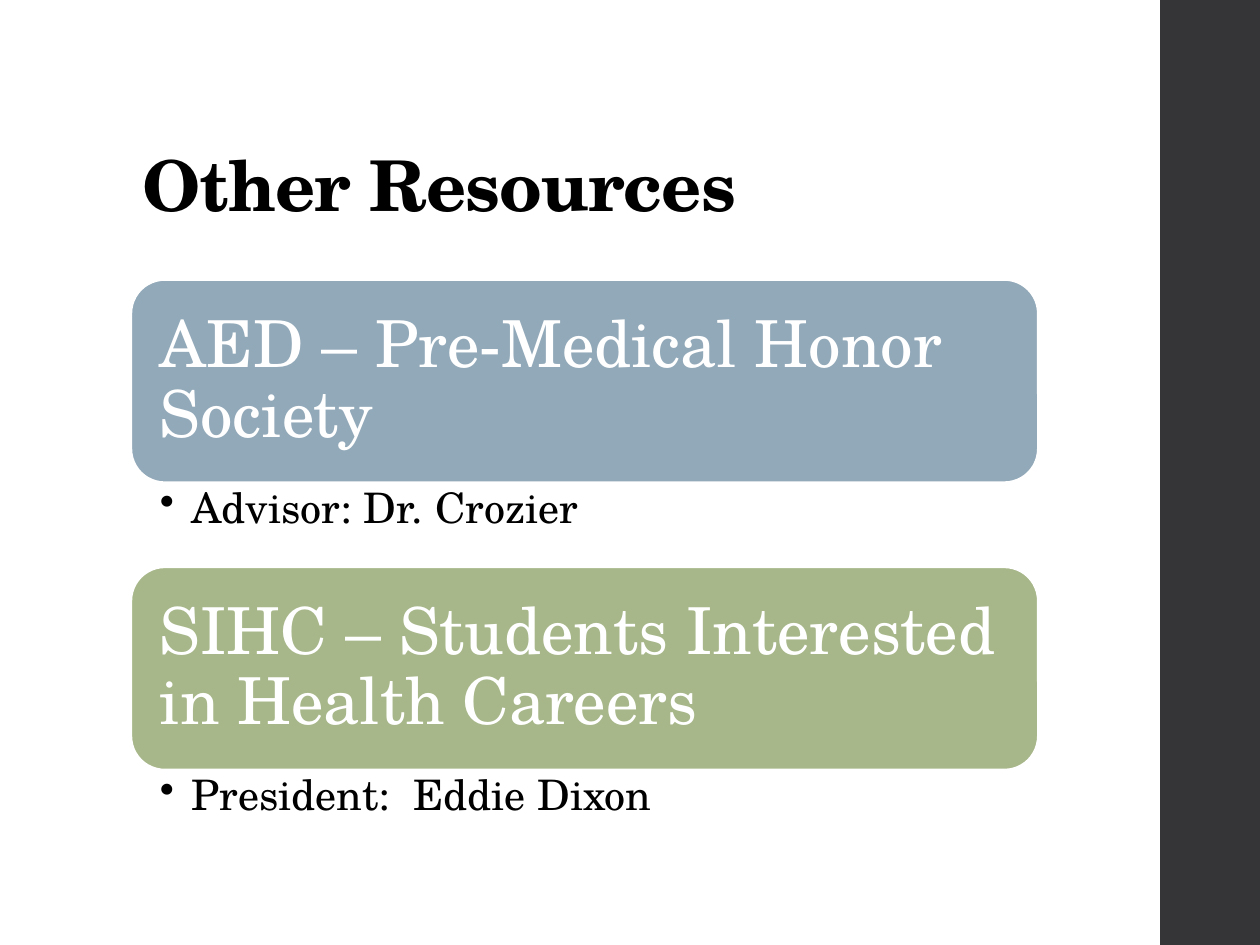
from lxml import etree
from pptx import Presentation, util as u
from pptx.dml.color import RGBColor
from pptx.enum import shapes, text
from pptx.oxml.ns import qn

Pt = u.Pt


def rgb(value):
    return RGBColor.from_string(value)


def add_text(tf, words, size, color, insets, anchor):
    tf.word_wrap = True
    tf.auto_size = text.MSO_AUTO_SIZE.NONE
    tf.vertical_anchor = anchor
    tf.margin_left, tf.margin_top, tf.margin_right, tf.margin_bottom = [Pt(i) for i in insets]
    p = tf.paragraphs[0]
    p.alignment = text.PP_ALIGN.LEFT
    p.line_spacing = 0.9
    r = p.add_run()
    r.text = words
    r.font.name = "TeX Gyre Schola"
    r.font.size = Pt(size)
    r.font.color.rgb = rgb(color)
    return p, r


prs = Presentation()
prs.slide_width, prs.slide_height = Pt(720), Pt(540)
s = prs.slides.add_slide(prs.slide_layouts[5])

sidebar = s.shapes.add_shape(shapes.MSO_SHAPE.RECTANGLE, Pt(663), 0, Pt(57.5), Pt(540))
sidebar.shadow.inherit = False
sidebar.fill.solid()
sidebar.fill.fore_color.rgb = rgb("353537")
sidebar.line.fill.background()

title = s.shapes.title
title.left, title.top, title.width, title.height = Pt(74.2), Pt(28.8), Pt(572.4), Pt(104.4)
p, r = add_text(title.text_frame, "Other Resources", 40, "000000",
                (7.2, 3.6, 7.2, 3.6), text.MSO_ANCHOR.BOTTOM)
r.font.bold = True
r._r.get_or_add_rPr().set("spc", "-50")

groups = [
    ("AED – Pre-Medical Honor Society", "Advisor: Dr. Crozier", "92A9B9"),
    ("SIHC – Students Interested in Health Careers", "President:  Eddie Dixon", "A7B789"),
]
left, top, width, card_h, detail_h = 74.9, 159.8, 518.4, 116, 48.2

for i, (name, contact, color) in enumerate(groups):
    y = top + i * (card_h + detail_h)
    sp = s.shapes.add_shape(shapes.MSO_SHAPE.ROUNDED_RECTANGLE,
                            Pt(left), Pt(y), Pt(width), Pt(card_h))
    sp.shadow.inherit = False
    sp.fill.solid()
    sp.fill.fore_color.rgb = rgb(color)
    sp.line.color.rgb = rgb("FFFFFF")
    sp.line.width = Pt(1.35)
    add_text(sp.text_frame, name, 37, "FFFFFF", (10.8,) * 4, text.MSO_ANCHOR.MIDDLE)

    sp = s.shapes.add_textbox(Pt(left), Pt(y + card_h), Pt(width), Pt(detail_h))
    p, r = add_text(sp.text_frame, contact, 24, "000000",
                    (16.5, 2.4, 13.7, 2.4), text.MSO_ANCHOR.TOP)
    pPr = p._p.get_or_add_pPr()
    pPr.set("marL", str(Pt(18)))
    pPr.set("indent", str(Pt(-18)))
    etree.SubElement(pPr, qn("a:buChar")).set("char", "•")

prs.save("out.pptx")
